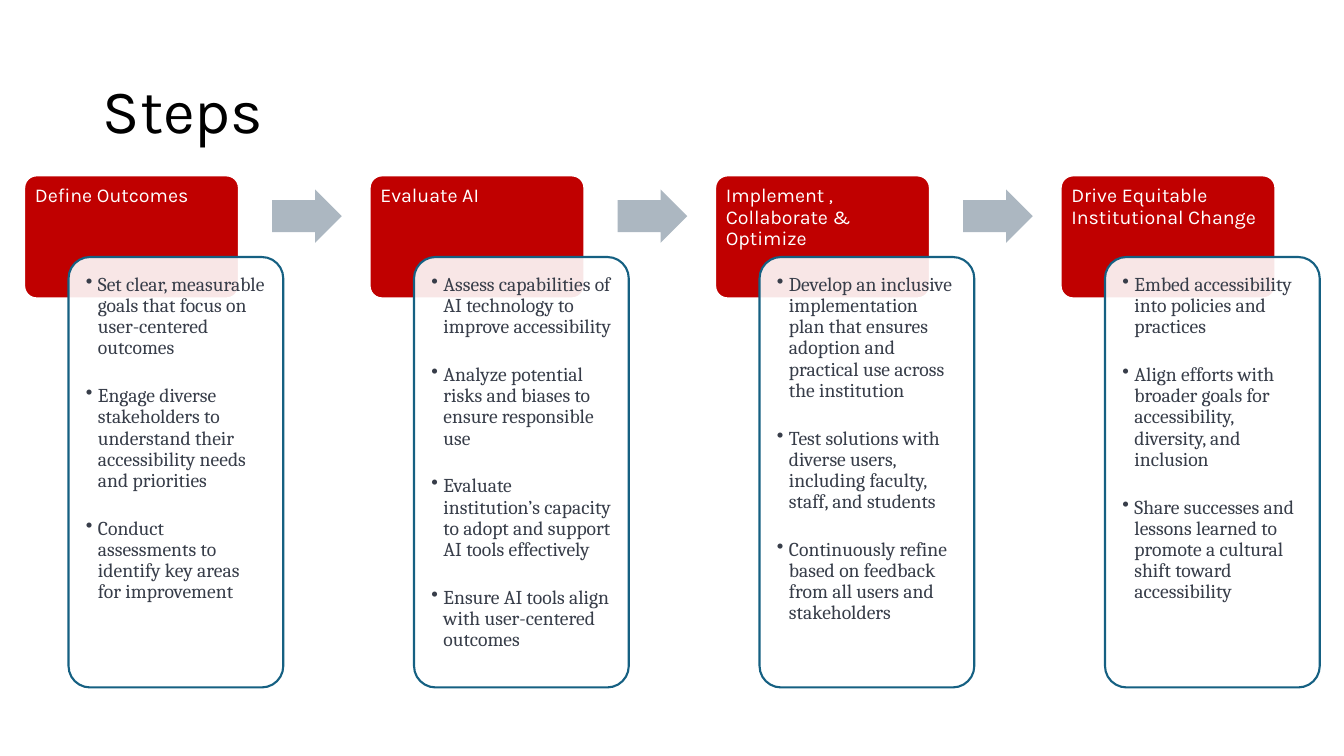
from pptx import Presentation
from pptx import util as u
from pptx.dml.color import RGBColor
from pptx.enum import shapes, text
from pptx.oxml import ns
from lxml import etree

PX = 9144
HUES = {"black": "000000", "white": "FFFFFF", "red": "C00000",
        "blue": "156082", "gray": "ACB7C1", "ink": "373D49"}
STEPS = [
    ("Define Outcomes", [
        "Set clear, measurable goals that focus on user-centered outcomes",
        "Engage diverse stakeholders to understand their accessibility needs and priorities",
        "Conduct assessments to identify key areas for improvement"]),
    ("Evaluate AI", [
        "Assess capabilities of AI technology to improve accessibility",
        "Analyze potential risks and biases to ensure responsible use",
        "Evaluate institution’s capacity to adopt and support AI tools effectively",
        "Ensure AI tools align with user-centered outcomes"]),
    ("Implement , Collaborate & Optimize", [
        "Develop an inclusive implementation plan that ensures adoption and practical use across the institution",
        "Test solutions with diverse users, including faculty, staff, and students",
        "Continuously refine based on feedback from all users and stakeholders"]),
    ("Drive Equitable Institutional Change", [
        "Embed accessibility into policies and practices",
        "Align efforts with broader goals for accessibility, diversity, and inclusion",
        "Share successes and lessons learned to promote a cultural shift toward accessibility"]),
]


def px(n):
    return u.Emu(round(n * PX))


def hue(name):
    return RGBColor.from_string(HUES[name])


def write(shape, lines, font="Karla", size=14, color="white", inset=10, edge=5,
          anchor=text.MSO_ANCHOR.TOP, after=0, bullet=False):
    frame = shape.text_frame
    frame.word_wrap = True
    frame.auto_size = text.MSO_AUTO_SIZE.NONE
    frame.vertical_anchor = anchor
    frame.margin_left = frame.margin_right = px(inset)
    frame.margin_top = frame.margin_bottom = px(edge)
    for i, line in enumerate(lines):
        para = frame.paragraphs[0] if i == 0 else frame.add_paragraph()
        para.alignment = text.PP_ALIGN.LEFT
        para.line_spacing = 0.9
        para.space_after = u.Pt(after)
        run = para.add_run()
        run.text = line
        run.font.name, run.font.size = font, u.Pt(size)
        run.font.color.rgb = hue(color)
        if bullet:
            props = para._p.get_or_add_pPr()
            props.set("marL", str(px(12)))
            props.set("indent", str(px(-12)))
            etree.SubElement(props, ns.qn("a:buChar")).set("char", "•")


def draw(slide, kind, box, fill, line=None, adjust=(0.1,), alpha=None):
    shape = slide.shapes.add_shape(kind, *map(px, box))
    shape.shadow.inherit = False
    for i, ratio in enumerate(adjust):
        shape.adjustments[i] = ratio
    shape.fill.solid()
    shape.fill.fore_color.rgb = hue(fill)
    if alpha:
        tone = shape._element.spPr.find(ns.qn("a:solidFill"))[0]
        etree.SubElement(tone, ns.qn("a:alpha")).set("val", str(alpha * 1000))
    if line:
        shape.line.color.rgb = hue(line)
        shape.line.width = u.Pt(1.5)
    else:
        shape.line.fill.background()
    return shape


def head(slide, box):
    title = slide.shapes.title
    title.left, title.top, title.width, title.height = map(px, box)
    write(title, ["Steps"], size=44, color="black", anchor=text.MSO_ANCHOR.MIDDLE)


def step(slide, box, name, points, arrow):
    left, top, wide, high = box
    side = 213
    round_box = shapes.MSO_SHAPE.ROUNDED_RECTANGLE
    label = draw(slide, round_box, (left, top, side, 122), "red", "white")
    write(label, [name], inset=7, edge=7)
    card = draw(slide, round_box, (left + wide - side, top + 81, side, high - 81),
                "white", "blue", alpha=90)
    write(card, points, font="Cambria", color="ink", inset=11, edge=11,
          after=19, bullet=True)
    if arrow:
        draw(slide, shapes.MSO_SHAPE.RIGHT_ARROW, (left + 246, top + 14, 69, 53),
             "gray", adjust=(0.6, 0.5))


def main():
    deck = Presentation()
    deck.slide_width, deck.slide_height = px(1333), px(750)
    slide = deck.slides.add_slide(deck.slide_layouts[5])
    head(slide, (92, 40, 1150, 145))
    last = len(STEPS) - 1
    for i, (name, points) in enumerate(STEPS):
        left = 24 + 1028 * i / last
        step(slide, (left, 174, 257, 508), name, points, arrow=i < last)
    deck.save("out.pptx")


if __name__ == "__main__":
    main()
